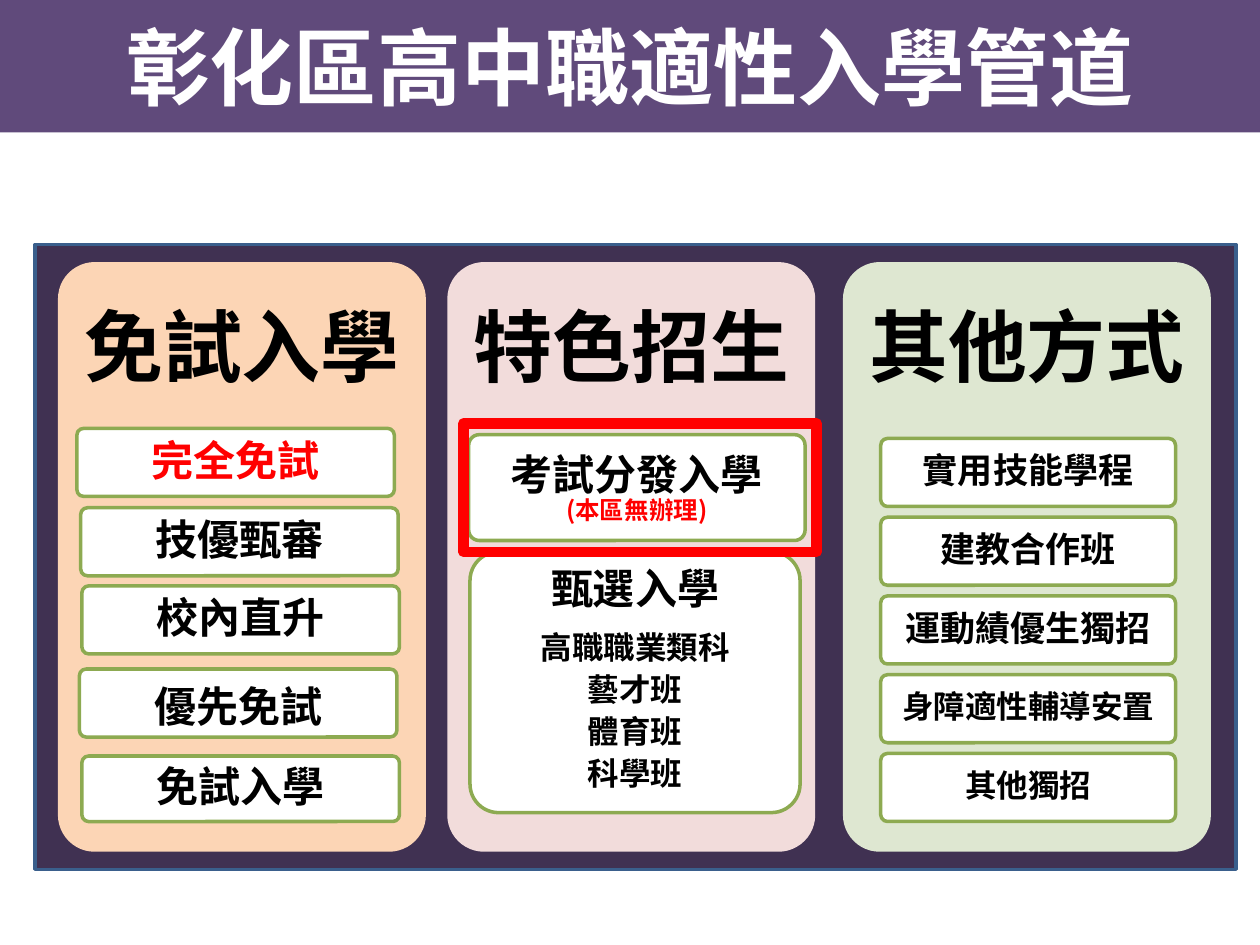
import pptx
import pptx.util
import pptx.dml.color
import pptx.enum.shapes
import pptx.enum.text
import lxml.etree

FONT = "Noto Sans CJK SC"
HUES = {
    "band": "604A7B", "panel": "403152", "edge": "3A5F8C",
    "peach": "FCD5B5", "pink": "F2DCDB", "sage": "DEE7D1",
    "green": "8DAA51", "white": "FFFFFF", "black": "000000", "red": "FF0000",
}
UNIT = pptx.util.Inches(0.1)
KIND = pptx.enum.shapes.MSO_SHAPE
MID = pptx.enum.text.MSO_ANCHOR.MIDDLE
TOP = pptx.enum.text.MSO_ANCHOR.TOP


def hue(name):
    """Return the named colour."""
    return pptx.dml.color.RGBColor.from_string(HUES[name])


def grid(*cells):
    """Turn grid cells, 100 columns by 75 rows, into lengths."""
    return [round(cell * UNIT) for cell in cells]


def block(slide, box, fill=None, line=None, width=2, bend=None):
    """Draw a rectangle, with round corners when bend is given."""
    kind = KIND.RECTANGLE if bend is None else KIND.ROUNDED_RECTANGLE
    shape = slide.shapes.add_shape(kind, *grid(*box))
    shape.shadow.inherit = False
    if bend is not None:
        shape.adjustments[0] = bend
    if fill:
        shape.fill.solid()
        shape.fill.fore_color.rgb = hue(fill)
    else:
        shape.fill.background()
    if line:
        shape.line.color.rgb = hue(line)
        shape.line.width = pptx.util.Pt(width)
    else:
        shape.line.fill.background()
    return shape


def write(shape, rows, pad=(0.5, 0.5, 0.5, 0.5), anchor=MID):
    """Write rows of text, size, colour, line spacing and space after."""
    frame = shape.text_frame
    frame.word_wrap = True
    frame.vertical_anchor = anchor
    (frame.margin_left, frame.margin_top,
     frame.margin_right, frame.margin_bottom) = grid(*pad)
    for i, (text, size, tone, lead, after) in enumerate(rows):
        para = frame.add_paragraph() if i else frame.paragraphs[0]
        para.alignment = pptx.enum.text.PP_ALIGN.CENTER
        para.line_spacing = lead
        para.space_before = pptx.util.Pt(0)
        para.space_after = pptx.util.Pt(after)
        run = para.add_run()
        run.text = text
        run.font.size = pptx.util.Pt(size)
        run.font.bold = True
        run.font.color.rgb = hue(tone)
        run.font.name = FONT
        tag = pptx.oxml.ns.qn("a:ea")
        lxml.etree.SubElement(run.font._element, tag, typeface=FONT)


def banner(slide, box):
    """Format the title as a band over the top of the slide."""
    title = slide.shapes.title
    title.left, title.top, title.width, title.height = grid(*box)
    title.fill.solid()
    title.fill.fore_color.rgb = hue("band")
    write(title, [("彰化區高中職適性入學管道", 48, "white", 1.0, 0)])


def column(slide, box, name, fill):
    """Draw one column with its heading."""
    shape = block(slide, box, fill, bend=0.1)
    write(shape, [(name, 45, "black", 0.9, 0)], (1, 1, 1, 33.7))


def card(slide, box, rows, pad=(0.5, 0.5, 0.5, 0.5), anchor=MID, bend=0.1):
    """Draw a white card with a green edge."""
    write(block(slide, box, "white", "green", bend=bend), rows, pad, anchor)


def exempt(slide, box):
    """Fill the column of admission without an exam."""
    column(slide, box, "免試入學", "peach")
    left, top = box[:2]
    items = [
        ("完全免試", 1.5, 13.2, 5.4, "red", 0.5),
        ("技優甄審", 1.8, 19.5, 5.4, "black", 0.5),
        ("校內直升", 1.9, 25.7, 5.4, "black", 0.5),
        ("優先免試", 1.7, 32.3, 5.4, "black", 1.4),
        ("免試入學", 1.9, 39.2, 5.2, "black", 0.5),
    ]
    for text, dx, dy, high, tone, pad in items:
        card(slide, (left + dx, top + dy, 25.2, high),
             [(text, 24, tone, 0.9, 0)], (0.5, pad, 0.5, 0.5))


def special(slide, box):
    """Fill the column of special admission and frame its exam card."""
    column(slide, box, "特色招生", "pink")
    left, top = box[:2]
    card(slide, (left + 1.7, top + 13.7, 26.7, 8.4),
         [("考試分發入學", 24, "black", 0.9, 8.4),
          ("(本區無辦理)", 14, "red", 0.2, 0)])
    lead = pptx.util.Pt(24)
    kinds = ["高職職業類科", "藝才班", "體育班", "科學班"]
    rows = [("甄選入學", 24, "black", 0.9, 6)]
    rows += [(text, 18, "black", lead, 0) for text in kinds]
    card(slide, (left + 1.8, top + 23, 26.2, 20.7), rows,
         (0.6, 0.6, 0.6, 0.6), TOP, 0.11)
    block(slide, (left + 1.3, top + 12.8, 28, 10.2), line="red", width=6)


def other(slide, box):
    """Fill the column of other ways with evenly spaced cards."""
    column(slide, box, "其他方式", "sage")
    left, top = box[:2]
    items = [("實用技能學程", 20), ("建教合作班", 20), ("運動績優生獨招", 20),
             ("身障適性輔導安置", 18), ("其他獨招", 18)]
    for i, (text, size) in enumerate(items):
        card(slide, (left + 3, top + 14 + 6.25 * i, 23.4, 5.4),
             [(text, size, "black", 0.9, 0)])


def panel(slide, box):
    """Draw the dark panel and its three columns."""
    block(slide, box, "panel", "edge")
    left, top = box[:2]
    for fill, dx in ((exempt, 1.8), (special, 32.7), (other, 64.1)):
        fill(slide, (left + dx, top + 1.4, 29.2, 46.8))


def main():
    """Build and save the slide."""
    deck = pptx.Presentation()
    deck.slide_width, deck.slide_height = grid(100, 75)
    slide = deck.slides.add_slide(deck.slide_layouts[5])
    banner(slide, (0, 0, 100, 10.5))
    panel(slide, (2.8, 19.4, 95.3, 49.6))
    deck.save("out.pptx")


if __name__ == "__main__":
    main()
